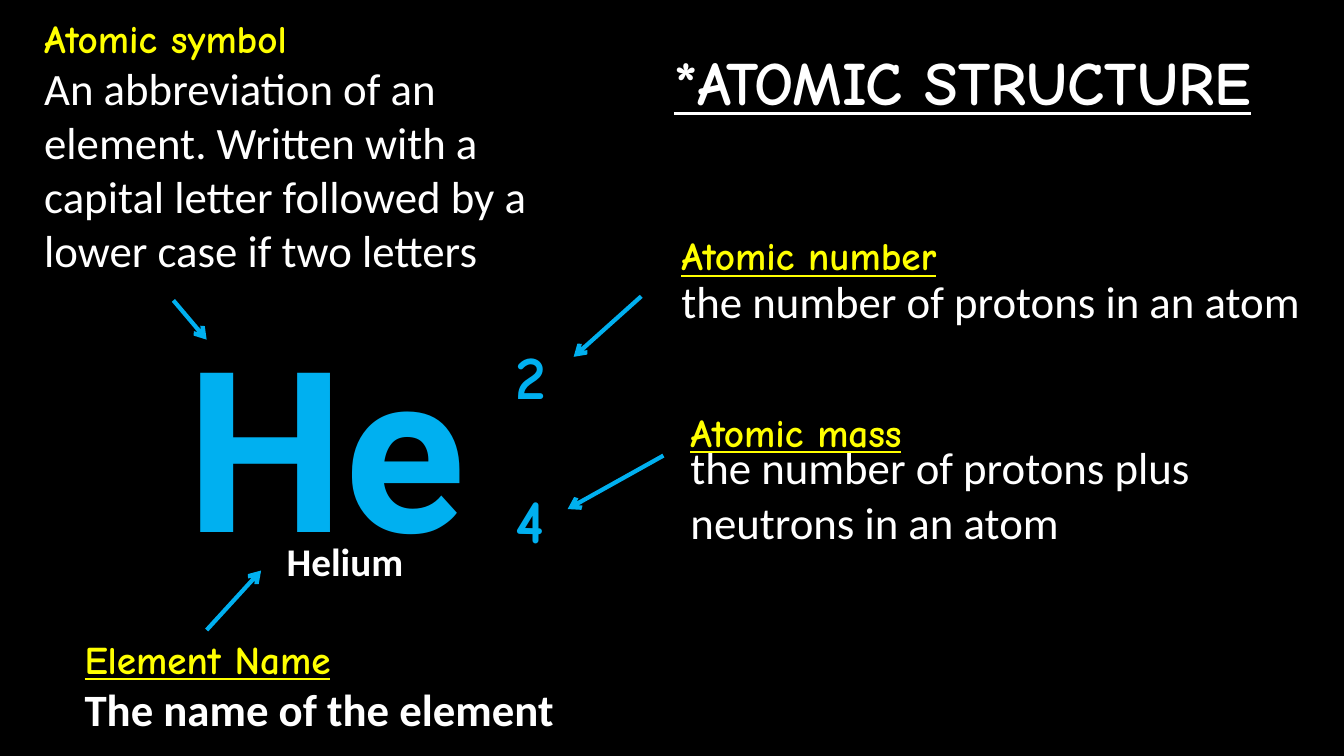
from pptx import Presentation
from pptx.dml.color import RGBColor
from pptx.enum import shapes, text
from pptx.oxml.ns import qn
from pptx.util import Inches, Pt
from lxml import etree

COLORS = {"black": "000000", "white": "FFFFFF", "blue": "00B0F0", "yellow": "FFFF00"}

HEADING = dict(font="Comic Neue", size=28, color="yellow", bold=True)
LINKED_HEADING = dict(HEADING, underline=True)
BODY = dict(font="Calibri", size=32, color="white")
TIGHT = dict(BODY, line_spacing=0.6)
NUMBER = dict(font="Comic Neue", size=44, color="blue", bold=True)
TITLE = dict(NUMBER, color="white", underline=True, align=text.PP_ALIGN.CENTER)
SYMBOL = dict(font="Roboto", size=160, color="blue", bold=True)
NAME = dict(font="Calibri", size=28, color="white", bold=True, align=text.PP_ALIGN.CENTER)

LABELS = [
    ((4.55, 0.39, 10, 0.84), [("*ATOMIC STRUCTURE", TITLE)]),
    ((6.66, 2.67, 6.66, 0.64), [("the number of protons in an atom", BODY)]),
    ((6.75, 4.5, 6.25, 1.05), [("the number of protons plus", TIGHT),
                               ("neutrons in an atom", dict(TIGHT, before=16))]),
    ((1.75, 3.01, 3.94, 2.77), [("He", SYMBOL)]),
    ((5.01, 3.3, 0.55, 0.83), [("2", NUMBER)]),
    ((5.01, 4.73, 0.55, 0.83), [("4", NUMBER)]),
    ((6.75, 4, 2.8, 0.57), [("Atomic mass", LINKED_HEADING)]),
    ((6.66, 2.25, 4, 0.57), [("Atomic number", LINKED_HEADING)]),
    ((0.34, 0.09, 5.66, 2.73), [
        ("Atomic symbol", HEADING),
        ("An abbreviation of an element. Written with a capital letter "
         "followed by a lower case if two letters", BODY)]),
    ((0.74, 6.25, 6.24, 1.11), [("Element Name", LINKED_HEADING),
                                ("The name of the element", dict(BODY, bold=True))]),
    ((2.05, 5.28, 2.83, 0.57), [("Helium ", NAME)]),
]

ARROWS = [
    ((1.72, 2.98), (2.05, 3.37)),
    ((6.36, 2.94), (5.69, 3.54)),
    ((6.58, 4.52), (5.63, 5.05)),
    ((2.05, 6.25), (2.59, 5.66)),
]


def rgb(color):
    return RGBColor.from_string(COLORS[color])


def write(paragraph, words, *, font, size, color, bold=False, underline=False,
          align=text.PP_ALIGN.LEFT, line_spacing=None, before=0):
    paragraph.alignment = align
    paragraph.line_spacing = line_spacing
    paragraph.space_before = Pt(before)
    run = paragraph.add_run()
    run.text = words
    run.font.name = font
    run.font.size = Pt(size)
    run.font.bold = bold
    run.font.underline = underline
    run.font.color.rgb = rgb(color)


def add_label(slide, place, lines):
    frame = slide.shapes.add_textbox(*map(Inches, place)).text_frame
    frame.word_wrap = True
    for index, (words, style) in enumerate(lines):
        paragraph = frame.add_paragraph() if index else frame.paragraphs[0]
        write(paragraph, words, **style)


def add_arrow(slide, start, end):
    arrow = slide.shapes.add_connector(
        shapes.MSO_CONNECTOR.STRAIGHT, *map(Inches, start + end))
    arrow.line.color.rgb = rgb("blue")
    arrow.line.width = Pt(3)
    etree.SubElement(arrow.line._get_or_add_ln(), qn("a:tailEnd"), type="arrow")
    etree.SubElement(arrow._element.spPr, qn("a:effectLst"))


def main():
    deck = Presentation()
    deck.slide_width, deck.slide_height = Inches(13.33), Inches(7.5)
    slide = deck.slides.add_slide(deck.slide_layouts[6])
    slide.background.fill.solid()
    slide.background.fill.fore_color.rgb = rgb("black")
    for place, lines in LABELS:
        add_label(slide, place, lines)
    for start, end in ARROWS:
        add_arrow(slide, start, end)
    deck.save("out.pptx")


if __name__ == "__main__":
    main()
